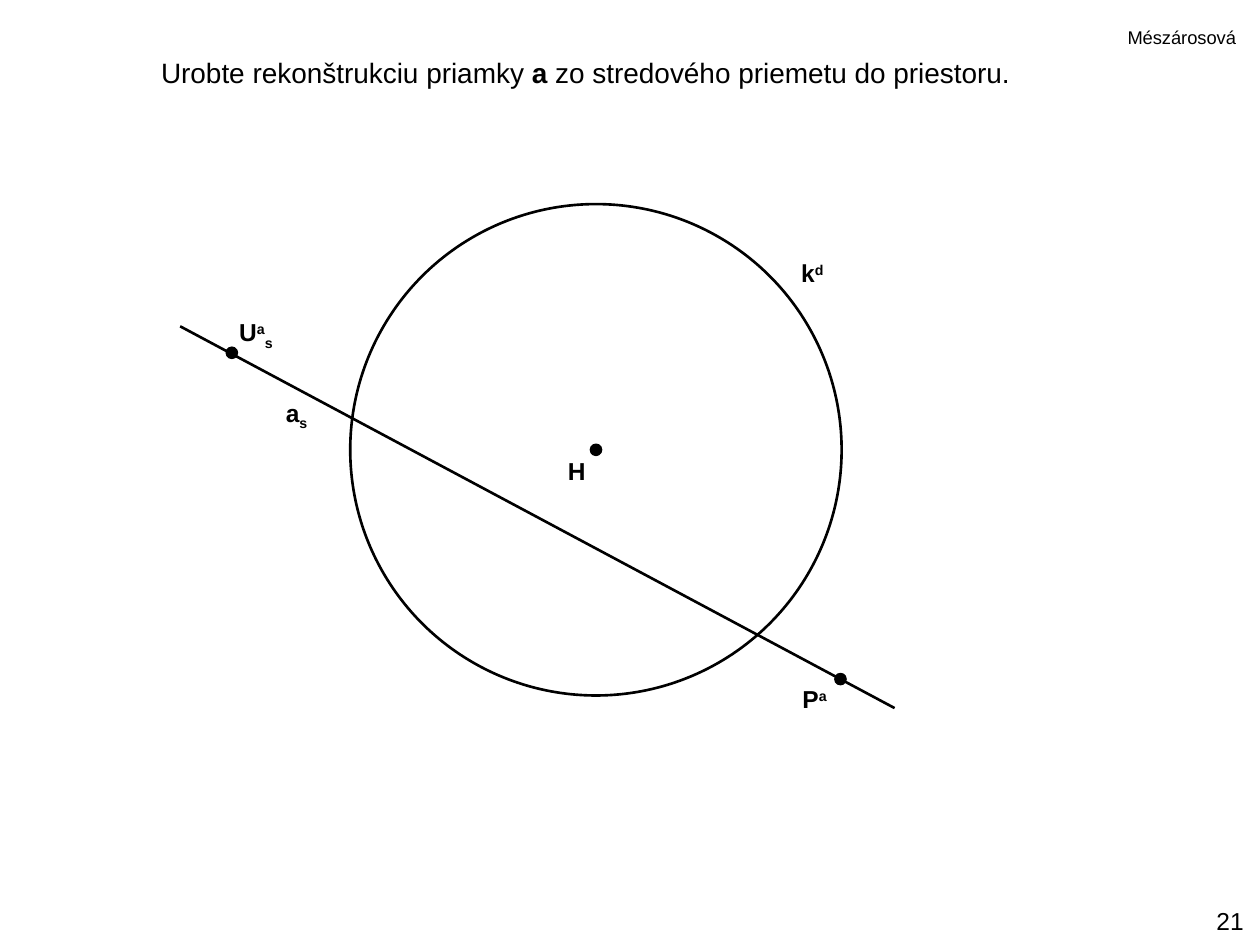
from dataclasses import dataclass

import pptx
import pptx.dml.color
import pptx.enum.shapes
import pptx.enum.text
import pptx.oxml.ns
import pptx.util
from lxml import etree

Inches = pptx.util.Inches
Pt = pptx.util.Pt
Align = pptx.enum.text.PP_ALIGN
Anchor = pptx.enum.text.MSO_ANCHOR
Kind = pptx.enum.shapes.MSO_SHAPE


@dataclass(frozen=True)
class Theme:
    ink: pptx.dml.color.RGBColor = pptx.dml.color.RGBColor(0, 0, 0)
    font: str = "Arial"
    title: float = 16
    label: float = 14
    author: float = 10.5
    stroke: float = 1.5
    edge: float = 0.75
    dot: float = 0.09


THEME = Theme()
PLAIN, BOLD, UPPER, LOWER = "plain", "bold", "upper", "lower"
SHIFT = {UPPER: "30000", LOWER: "-25000"}


def add_text(slide, runs, *, box, size, bold=False,
             align=Align.LEFT, anchor=Anchor.TOP):
    frame = slide.shapes.add_textbox(*map(Inches, box)).text_frame
    frame.word_wrap = False
    frame.vertical_anchor = anchor
    para = frame.paragraphs[0]
    para.alignment = align
    for words, style in runs:
        run = para.add_run()
        run.text = words
        font = run.font
        font.name = THEME.font
        font.size = Pt(size)
        font.bold = bold or style == BOLD
        font.color.rgb = THEME.ink
        if style in SHIFT:
            run._r.get_or_add_rPr().set("baseline", SHIFT[style])


def add_round(slide, x, y, size, width, filled):
    half = size / 2
    shape = slide.shapes.add_shape(
        Kind.OVAL, Inches(x - half), Inches(y - half), Inches(size), Inches(size))
    shape.shadow.inherit = False
    if filled:
        shape.fill.solid()
        shape.fill.fore_color.rgb = THEME.ink
    else:
        shape.fill.background()
    shape.line.color.rgb = THEME.ink
    shape.line.width = Pt(width)


def add_line(slide, start, end):
    line = slide.shapes.add_connector(
        pptx.enum.shapes.MSO_CONNECTOR.STRAIGHT, *map(Inches, start + end))
    line.line.color.rgb = THEME.ink
    line.line.width = Pt(THEME.stroke)
    etree.SubElement(line._element.spPr, pptx.oxml.ns.qn("a:effectLst"))


def draw_header(slide, box):
    left, top, width, height = box
    task = [("Urobte rekonštrukciu priamky ", PLAIN), ("a", BOLD),
            (" zo stredového priemetu do priestoru.", PLAIN)]
    add_text(slide, task, box=(left + 1.18, top + 0.23, 7.03, 0.37), size=THEME.title)
    add_text(slide, [("Mészárosová", PLAIN)],
             box=(left + width - 1.08, top, 1.08, 0.28), size=THEME.author)


def draw_figure(slide, box):
    left, top, width, height = box
    center = (3.3, 1.95)
    dots = [center, (0.41, 1.18), (5.24, 3.77)]
    labels = [
        (0.37, 0.85, 0.49, [("U", PLAIN), ("a", UPPER), ("s", LOWER)]),
        (4.83, 0.38, 0.39, [("k", PLAIN), ("d", UPPER)]),
        (0.74, 1.49, 0.38, [("a", PLAIN), ("s", LOWER)]),
        (2.98, 1.95, 0.34, [("H", PLAIN)]),
        (4.84, 3.76, 0.41, [("P", PLAIN), ("a", UPPER)]),
    ]
    add_round(slide, left + center[0], top + center[1], 3.9, THEME.stroke, False)
    add_line(slide, (left, top + 0.97), (left + width, top + height))
    for x, y in dots:
        add_round(slide, left + x, top + y, THEME.dot, THEME.edge, True)
    for x, y, wide, runs in labels:
        add_text(slide, runs, box=(left + x, top + y, wide, 0.34),
                 size=THEME.label, bold=True)


def draw_number(slide, box):
    add_text(slide, [("21", PLAIN)], box=box, size=THEME.label,
             align=Align.RIGHT, anchor=Anchor.BOTTOM)


def main():
    deck = pptx.Presentation()
    deck.slide_width, deck.slide_height = Inches(10), Inches(7.5)
    slide = deck.slides.add_slide(deck.slide_layouts[6])
    draw_header(slide, (0, 0.16, 9.93, 0.6))
    draw_figure(slide, (1.43, 1.62, 5.67, 4))
    draw_number(slide, (9.53, 7.13, 0.44, 0.34))
    deck.save("out.pptx")


if __name__ == "__main__":
    main()
